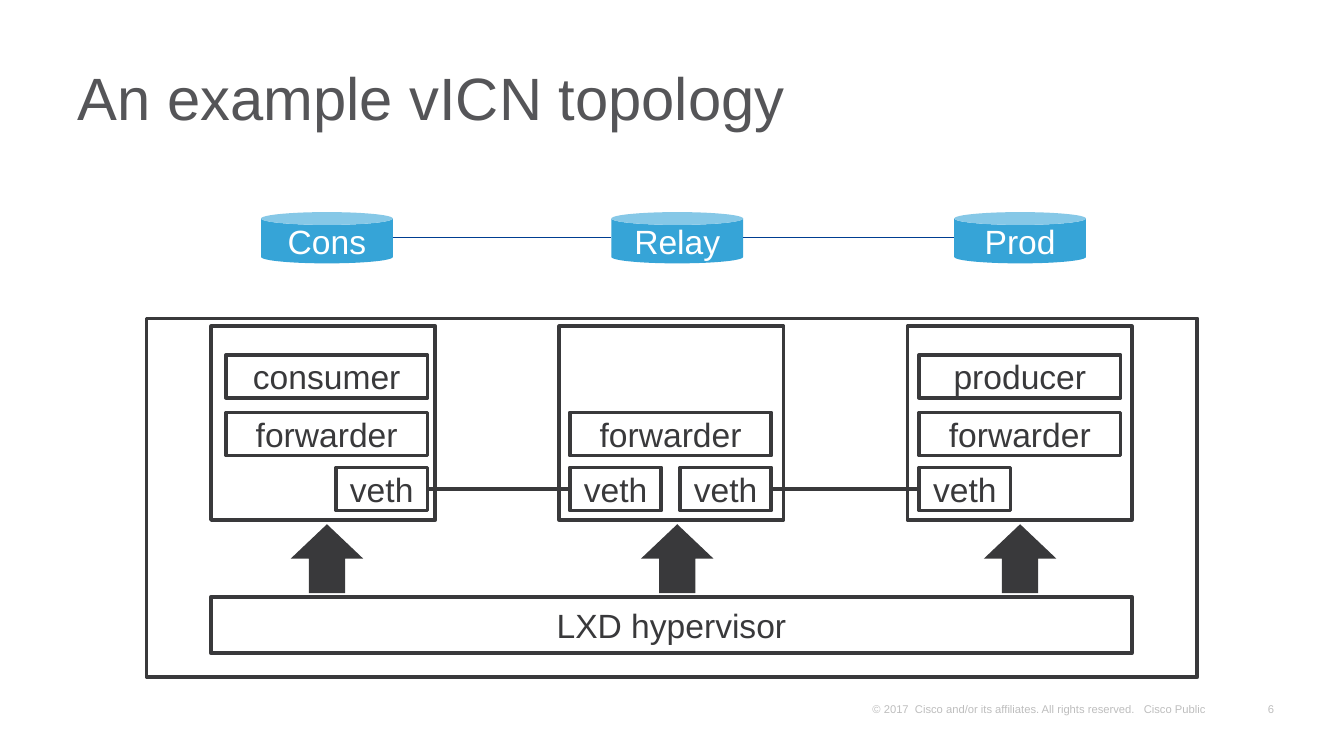
from pptx import Presentation
from pptx.dml.color import RGBColor
from pptx.enum import shapes, text
from pptx.oxml import xmlchemy
from pptx.util import Cm, Pt
from lxml import etree

DARK = RGBColor(0x39, 0x39, 0x3B)
WHITE = RGBColor(0xFF, 0xFF, 0xFF)
SKY = RGBColor(0x36, 0xA4, 0xD7)
NAVY = RGBColor(0x00, 0x3E, 0x91)
GREY = RGBColor(0x55, 0x55, 0x58)
BLACK = RGBColor(0, 0, 0)
DRAWING = "{http://schemas.openxmlformats.org/drawingml/2006/main}"

TITLE = "An example vICN topology"
COPYRIGHT = "© 2017  Cisco and/or its affiliates. All rights reserved.   Cisco Public"
PAGE = "6"
HYPERVISOR = "LXD hypervisor"
NODES = [
    {"router": "Cons", "center": 6.18, "inner": 4.27, "app": "consumer", "ports": ["right"]},
    {"router": "Relay", "center": 12.8, "inner": 10.77, "app": None, "ports": ["left", "right"]},
    {"router": "Prod", "center": 19.28, "inner": 17.37, "app": "producer", "ports": ["left"]},
]

FRAME = (2.77, 6.02, 19.86, 6.78)
NODE_LEFT, NODE_TOP, NODE_STEP = 3.99, 6.17, 6.58
NODE_WIDTH, NODE_HEIGHT = 4.24, 3.66
CAN_TOP, CAN_WIDTH, CAN_HEIGHT = 4.01, 2.49, 0.97
ARROW_TOP, ARROW_WIDTH, ARROW_HEIGHT = 9.91, 1.37, 1.3
APP_TOP, FORWARDER_TOP, PORT_TOP = 6.71, 7.8, 8.84
BOX_WIDTH, PORT_WIDTH, BOX_HEIGHT = 3.81, 1.73, 0.81

presentation = Presentation()
presentation.slide_width, presentation.slide_height = Cm(25.4), Cm(14.29)
slide = presentation.slides.add_slide(presentation.slide_layouts[6])


def add_run(paragraph, words, size, color):
    run = paragraph.add_run()
    run.text = words
    run.font.name, run.font.size = "Arial", Pt(size)
    run.font.color.rgb = color
    return run


def add_shape(kind, place, fill, line=None, words=None, color=DARK):
    shape = slide.shapes.add_shape(kind, *map(Cm, place))
    shape.shadow.inherit = False
    shape.fill.solid()
    shape.fill.fore_color.rgb = fill
    if line is None:
        shape.line.fill.background()
    else:
        shape.line.color.rgb, shape.line.width = line, Pt(2)
    if words:
        frame = shape.text_frame
        frame.margin_left = frame.margin_right = frame.margin_top = frame.margin_bottom = 0
        frame.word_wrap = True
        frame.vertical_anchor = text.MSO_ANCHOR.MIDDLE
        paragraph = frame.paragraphs[0]
        paragraph.alignment = text.PP_ALIGN.CENTER
        add_run(paragraph, words, 18, color)


def add_box(place, words=None):
    add_shape(shapes.MSO_SHAPE.RECTANGLE, place, WHITE, DARK, words)


def add_link(left, right, y, color, width):
    link = slide.shapes.add_connector(
        shapes.MSO_CONNECTOR.STRAIGHT, Cm(left), Cm(y), Cm(right), Cm(y))
    link.line.color.rgb, link.line.width = color, Pt(width)
    etree.SubElement(link._element.spPr, DRAWING + "effectLst")


def add_text(place, words, size, color, anchor, align, margins):
    frame = slide.shapes.add_textbox(*map(Cm, place)).text_frame
    frame.word_wrap = True
    frame.vertical_anchor = anchor
    frame.margin_left = frame.margin_right = Cm(margins[0])
    frame.margin_top = frame.margin_bottom = Cm(margins[1])
    paragraph = frame.paragraphs[0]
    paragraph.alignment = align
    return paragraph, add_run(paragraph, words, size, color)


for place, words, align in [
    ((23.65, 13.18, 0.61, 0.43), PAGE, text.PP_ALIGN.RIGHT),
    ((16.31, 13.18, 7.39, 0.43), COPYRIGHT, text.PP_ALIGN.LEFT),
]:
    _, run = add_text(place, words, 6, BLACK, text.MSO_ANCHOR.BOTTOM, align, (0.18, 0.08))
    color = run._r.find(f".//{DRAWING}srgbClr")
    etree.SubElement(color, DRAWING + "alpha", val="25000")

heading, _ = add_text((1.22, 0.94, 23.19, 2.03), TITLE, 32, GREY,
                      text.MSO_ANCHOR.MIDDLE, text.PP_ALIGN.LEFT, (0.25, 0.13))
heading.line_spacing = 0.8

add_box(FRAME)
add_box((NODE_LEFT, 11.28, 2 * NODE_STEP + NODE_WIDTH, 1.07), HYPERVISOR)

for index, node in enumerate(NODES):
    center, inner = node["center"], node["inner"]
    add_shape(shapes.MSO_SHAPE.CAN, (center - CAN_WIDTH / 2, CAN_TOP, CAN_WIDTH, CAN_HEIGHT),
              SKY, words=node["router"], color=WHITE)
    add_box((NODE_LEFT + index * NODE_STEP, NODE_TOP, NODE_WIDTH, NODE_HEIGHT))
    if node["app"]:
        add_box((inner, APP_TOP, BOX_WIDTH, BOX_HEIGHT), node["app"])
    add_box((inner, FORWARDER_TOP, BOX_WIDTH, BOX_HEIGHT), "forwarder")
    for side in node["ports"]:
        shift = BOX_WIDTH - PORT_WIDTH if side == "right" else 0
        add_box((inner + shift, PORT_TOP, PORT_WIDTH, BOX_HEIGHT), "veth")
    add_shape(shapes.MSO_SHAPE.UP_ARROW,
              (center - ARROW_WIDTH / 2, ARROW_TOP, ARROW_WIDTH, ARROW_HEIGHT), DARK)

for start, end in zip(NODES, NODES[1:]):
    add_link(start["center"] + CAN_WIDTH / 2, end["center"] - CAN_WIDTH / 2,
             CAN_TOP + CAN_HEIGHT / 2, NAVY, 0.75)
    add_link(start["inner"] + BOX_WIDTH, end["inner"], PORT_TOP + BOX_HEIGHT / 2, DARK, 2)

presentation.save("out.pptx")
